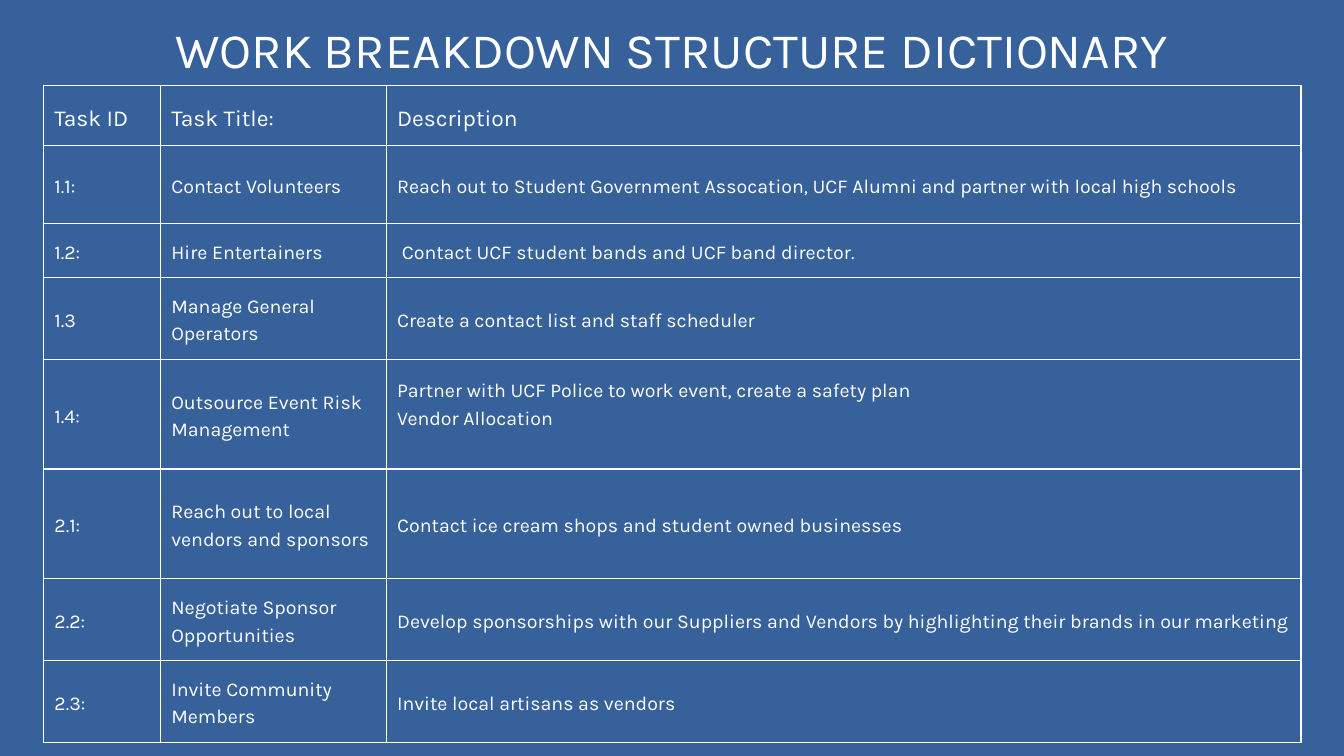
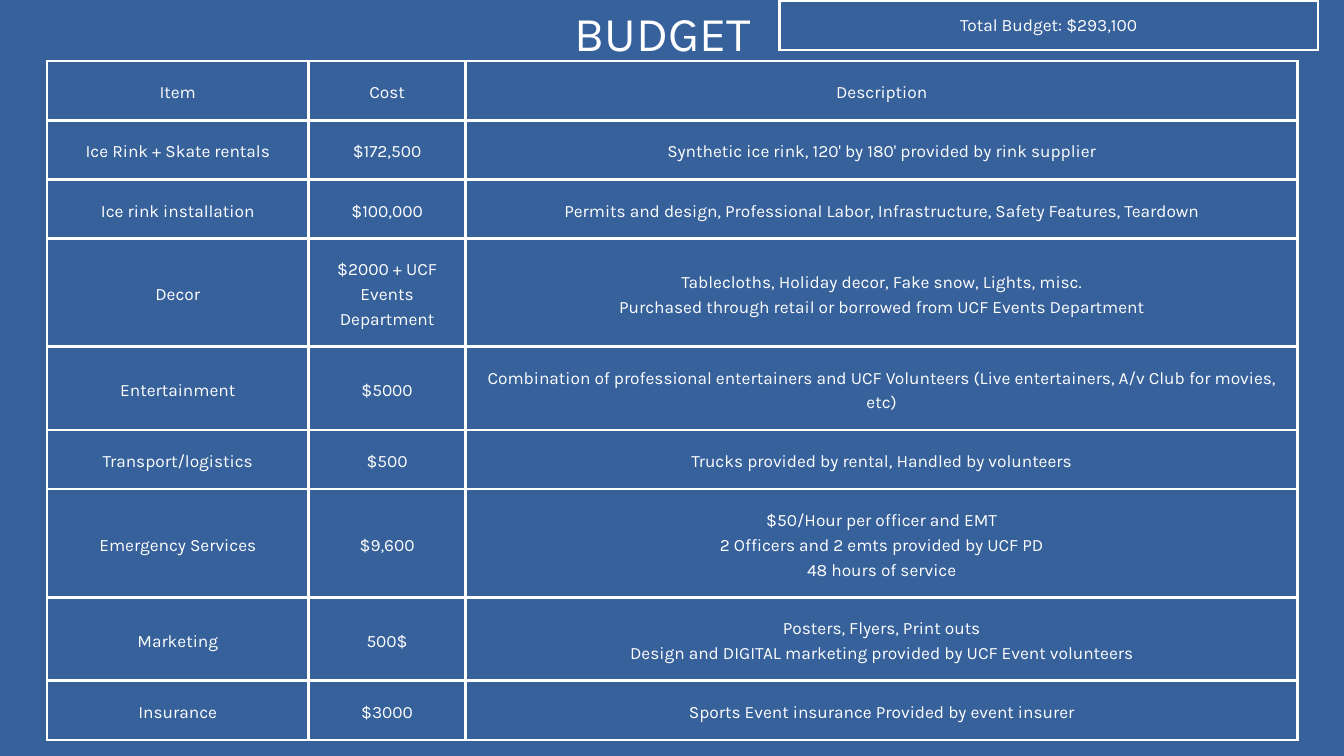
from lxml import etree
from pptx import Presentation
from pptx import util as u
from pptx.dml.color import RGBColor
from pptx.enum import text
from pptx.oxml import ns

SCALE = 9144
WIDE, HIGH = 2000, 1125
BLUE = RGBColor(0x37, 0x61, 0x9B)
WHITE = RGBColor(0xFF, 0xFF, 0xFF)
FACE = "Karla"
LEFT, MID = text.PP_ALIGN.LEFT, text.PP_ALIGN.CENTER

TASKS = [
    ("Task ID", "Task Title:", "Description"),
    ("1.1:", "Contact Volunteers",
     "Reach out to Student Government Assocation, UCF Alumni and partner with local high schools"),
    ("1.2:", "Hire Entertainers", "Contact UCF student bands and UCF band director."),
    ("1.3", "Manage General Operators", "Create a contact list and staff scheduler"),
    ("1.4:", "Outsource Event Risk Management",
     "Partner with UCF Police to work event, create a safety plan\nVendor Allocation"),
    ("2.1:", "Reach out to local vendors and sponsors",
     "Contact ice cream shops and student owned businesses"),
    ("2.2:", "Negotiate Sponsor Opportunities",
     "Develop sponsorships with our Suppliers and Vendors by highlighting their brands in our marketing"),
    ("2.3:", "Invite Community Members", "Invite local artisans as vendors"),
]
COSTS = [
    ("Item", "Cost", "Description"),
    ("Ice Rink + Skate rentals", "$172,500",
     "Synthetic ice rink, 120' by 180' provided by rink supplier"),
    ("Ice rink installation", "$100,000",
     "Permits and design, Professional Labor, Infrastructure, Safety Features, Teardown"),
    ("Decor", "$2000 + UCF Events Department",
     "Tablecloths, Holiday decor, Fake snow, Lights, misc.\n"
     "Purchased through retail or borrowed from UCF Events Department"),
    ("Entertainment", "$5000",
     "Combination of professional entertainers and UCF Volunteers "
     "(Live entertainers, A/v Club for movies, etc)"),
    ("Transport/logistics", "$500", "Trucks provided by rental, Handled by volunteers"),
    ("Emergency Services", "$9,600",
     "$50/Hour per officer and EMT\n2 Officers and 2 emts provided by UCF PD\n48 hours of service"),
    ("Marketing", "500$",
     "Posters, Flyers, Print outs\nDesign and DIGITAL marketing provided by UCF Event volunteers"),
    ("Insurance", "$3000", "Sports Event insurance Provided by event insurer"),
]


def px(n):
    return u.Emu(n * SCALE)


def style(para, size, lead, align):
    para.alignment = align
    if lead:
        para.line_spacing = u.Pt(lead)
    font = para.font
    font.name, font.size, font.bold = FACE, u.Pt(size), False
    font.color.rgb = WHITE


def add_page(deck, title, box, size, lead):
    page = deck.slides.add_slide(deck.slide_layouts[5])
    head = page.shapes.title
    head.left, head.top, head.width, head.height = map(px, box)
    frame = head.text_frame
    frame.text = title
    frame.word_wrap = True
    frame.auto_size = text.MSO_AUTO_SIZE.NONE
    frame.vertical_anchor = text.MSO_ANCHOR.TOP
    frame.margin_left = frame.margin_right = frame.margin_top = frame.margin_bottom = 0
    style(frame.paragraphs[0], size, lead, MID)
    return page


def add_edges(cell, weight):
    props = cell._tc.get_or_add_tcPr()
    for side in ("lnL", "lnR", "lnT", "lnB"):
        line = etree.SubElement(props, ns.qn(f"a:{side}"), w=str(u.Pt(weight)))
        fill = etree.SubElement(line, ns.qn("a:solidFill"))
        etree.SubElement(fill, ns.qn("a:srgbClr"), val=str(WHITE))


def add_grid(page, spot, cols, rows, data, size, lead, pad, weight, align=MID, top=None):
    left, up = spot
    box = map(px, (left, up, sum(cols), sum(rows)))
    grid = page.shapes.add_table(len(rows), len(cols), *box).table
    grid.first_row = grid.horz_banding = False
    for col, width in zip(grid.columns, cols):
        col.width = px(width)
    for i, (row, height, words) in enumerate(zip(grid.rows, rows, data)):
        row.height = px(height)
        for cell, word in zip(row.cells, words):
            cell.text = word
            cell.vertical_anchor = text.MSO_ANCHOR.MIDDLE
            cell.margin_left = cell.margin_right = px(pad)
            cell.margin_top = cell.margin_bottom = px(pad)
            add_edges(cell, weight)
            cell.fill.background()
            for para in cell.text_frame.paragraphs:
                style(para, *(top if top and i == 0 else (size, lead)), align)
    return grid


def add_tasks(deck):
    page = add_page(deck, "WORK BREAKDOWN STRUCTURE DICTIONARY",
                    (122, 13, 1755, 99), 53.1, 74.3)
    grid = add_grid(page, (65, 127), (174, 336, 1361),
                    (90, 115, 81, 122, 163, 163, 122, 122), TASKS,
                    21, 29.4, 16, 1.5, LEFT, (24.5, 35))
    grid.cell(2, 2).margin_left = px(23)
    grid.cell(4, 2).margin_bottom = px(50)


def add_budget(deck):
    page = add_page(deck, "BUDGET", (745, -10, 482, 97), 52, 72.8)
    add_grid(page, (70, 91), (389, 234, 1238),
             (88, 88, 88, 161, 124, 88, 161, 124, 88), COSTS, 18.5, 26.6, 21, 3)
    add_grid(page, (1160, 2), (801,), (72,), [("Total Budget: $293,100",)],
             18.5, None, 21, 2.63)


def main():
    deck = Presentation()
    deck.slide_width, deck.slide_height = px(WIDE), px(HIGH)
    back = deck.slide_master.background.fill
    back.solid()
    back.fore_color.rgb = BLUE
    add_tasks(deck)
    add_budget(deck)
    deck.save("out.pptx")


if __name__ == "__main__":
    main()
